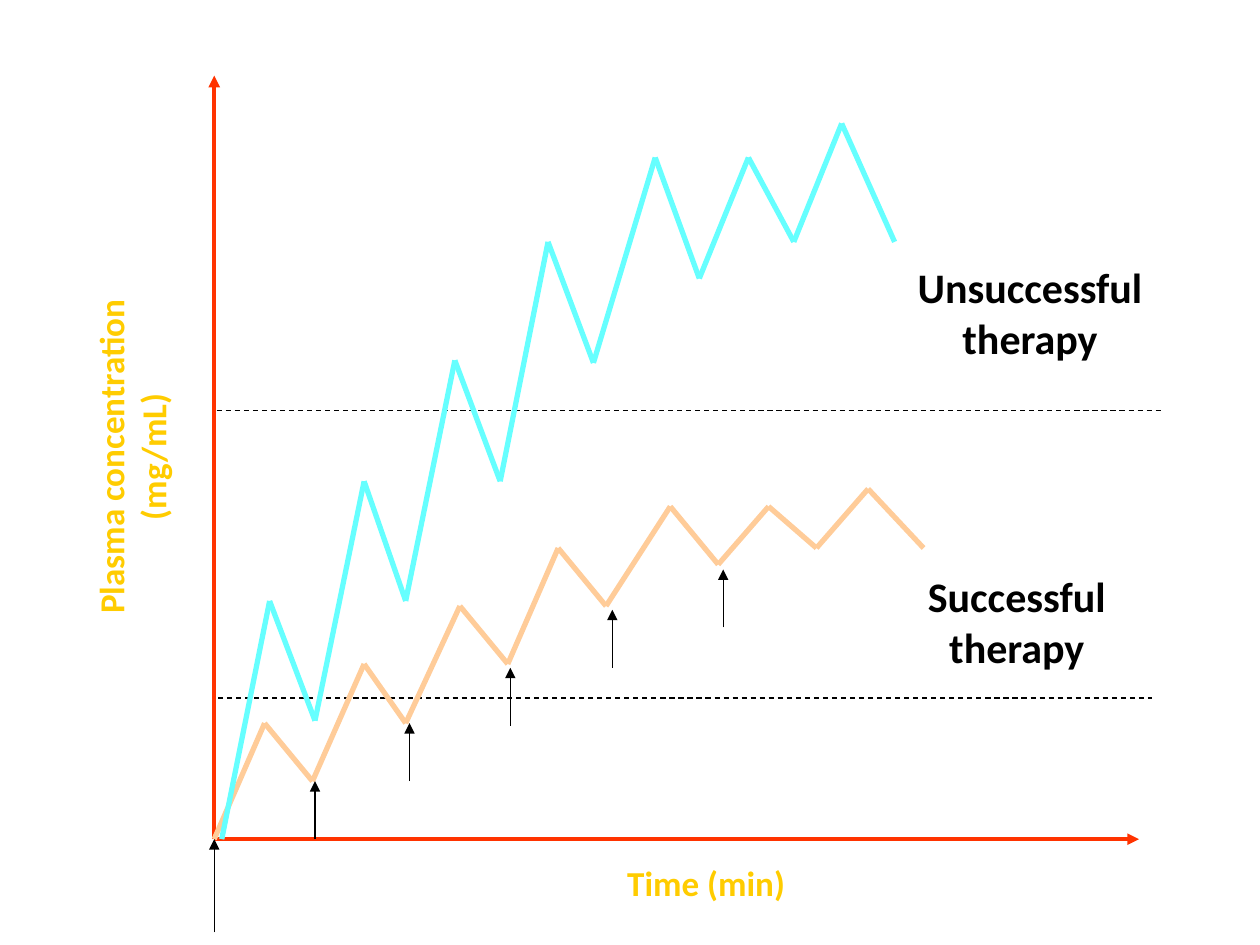
from itertools import pairwise

from lxml import etree
from pptx import Presentation
from pptx.dml.color import RGBColor
from pptx.enum import dml, shapes, text
from pptx.oxml import ns
from pptx.util import Inches, Pt

AXIS, LABEL, BLACK = "FF3300", "FFCC00", "000000"
SUCCESSFUL, UNSUCCESSFUL = "FFCC99", "66FFFF"
ORIGIN = (1.7, 6.66)

SUCCESSFUL_LEVELS = [
    ORIGIN, (2.1, 5.74), (2.48, 6.2), (2.89, 5.27), (3.22, 5.74),
    (3.65, 4.81), (4.03, 5.27), (4.43, 4.35), (4.81, 4.81), (5.32, 4.02),
    (5.7, 4.48), (6.1, 4.02), (6.48, 4.35), (6.89, 3.88), (7.33, 4.35),
]
UNSUCCESSFUL_LEVELS = [
    (1.76, 6.66), (2.14, 4.77), (2.5, 5.72), (2.89, 3.82), (3.22, 4.77),
    (3.61, 2.86), (3.97, 3.82), (4.35, 1.92), (4.71, 2.88), (5.2, 1.25),
    (5.55, 2.21), (5.94, 1.25), (6.3, 1.92), (6.68, 0.98), (7.1, 1.92),
]
DOSE_TIPS = [(2.5, 6.2), (3.25, 5.74), (4.05, 5.3), (4.86, 4.84), (5.74, 4.52)]
DOSE_LENGTH = 0.46


def rgb(color):
    return RGBColor.from_string(color)


def add_line(slide, start, end, color, width):
    line = slide.shapes.add_connector(
        shapes.MSO_CONNECTOR.STRAIGHT, *map(Inches, (*start, *end)))
    line.line.color.rgb = rgb(color)
    line.line.width = Pt(width)
    etree.SubElement(line._element.spPr, ns.qn("a:effectLst"))
    return line


def add_arrow(slide, start, end, color, width):
    arrow = add_line(slide, start, end, color, width)
    outline = arrow.line._get_or_add_ln()
    etree.SubElement(outline, ns.qn("a:tailEnd"), type="triangle")


def add_threshold(slide, start, end):
    threshold = add_line(slide, start, end, BLACK, 0.75)
    threshold.line.dash_style = dml.MSO_LINE.DASH


def add_curve(slide, levels, color):
    for start, end in pairwise(levels):
        add_line(slide, start, end, color, 3)


def add_label(slide, place, lines, size, color, align=text.PP_ALIGN.CENTER, rotation=0):
    label = slide.shapes.add_textbox(*map(Inches, place))
    label.rotation = rotation
    frame = label.text_frame
    frame.word_wrap = False
    frame.auto_size = text.MSO_AUTO_SIZE.SHAPE_TO_FIT_TEXT
    frame.text = "\n".join(lines)
    for paragraph in frame.paragraphs:
        paragraph.alignment = align
        paragraph.font.name = "Calibri"
        paragraph.font.size = Pt(size)
        paragraph.font.bold = True
        paragraph.font.color.rgb = rgb(color)


def main():
    deck = Presentation()
    deck.slide_width, deck.slide_height = Inches(10), Inches(7.5)
    slide = deck.slides.add_slide(deck.slide_layouts[6])

    add_label(slide, (4.88, 6.79, 1.6, 0.43), ["Time (min)"], 20, LABEL,
              align=text.PP_ALIGN.LEFT)
    for axis_end in ((1.7, 0.6), (9.04, 6.66)):
        add_arrow(slide, ORIGIN, axis_end, AXIS, 2.25)
    add_label(slide, (-0.5, 3.24, 3.09, 0.77),
              ["Plasma concentration", "(mg/mL)"], 20, LABEL, rotation=270)

    add_threshold(slide, (1.72, 3.26), (9.22, 3.26))
    add_threshold(slide, (1.73, 5.54), (9.14, 5.54))
    add_curve(slide, SUCCESSFUL_LEVELS, SUCCESSFUL)
    add_curve(slide, UNSUCCESSFUL_LEVELS, UNSUCCESSFUL)

    add_label(slide, (6.99, 2.03, 2.37, 0.9), ["Unsuccessful", "therapy"], 24, BLACK)
    add_label(slide, (7.09, 4.48, 1.96, 0.9), ["Successful", "therapy"], 24, BLACK)

    add_arrow(slide, (1.7, 7.4), ORIGIN, BLACK, 0.75)
    for x, y in DOSE_TIPS:
        add_arrow(slide, (x, y + DOSE_LENGTH), (x, y), BLACK, 0.75)

    deck.save("out.pptx")


if __name__ == "__main__":
    main()
